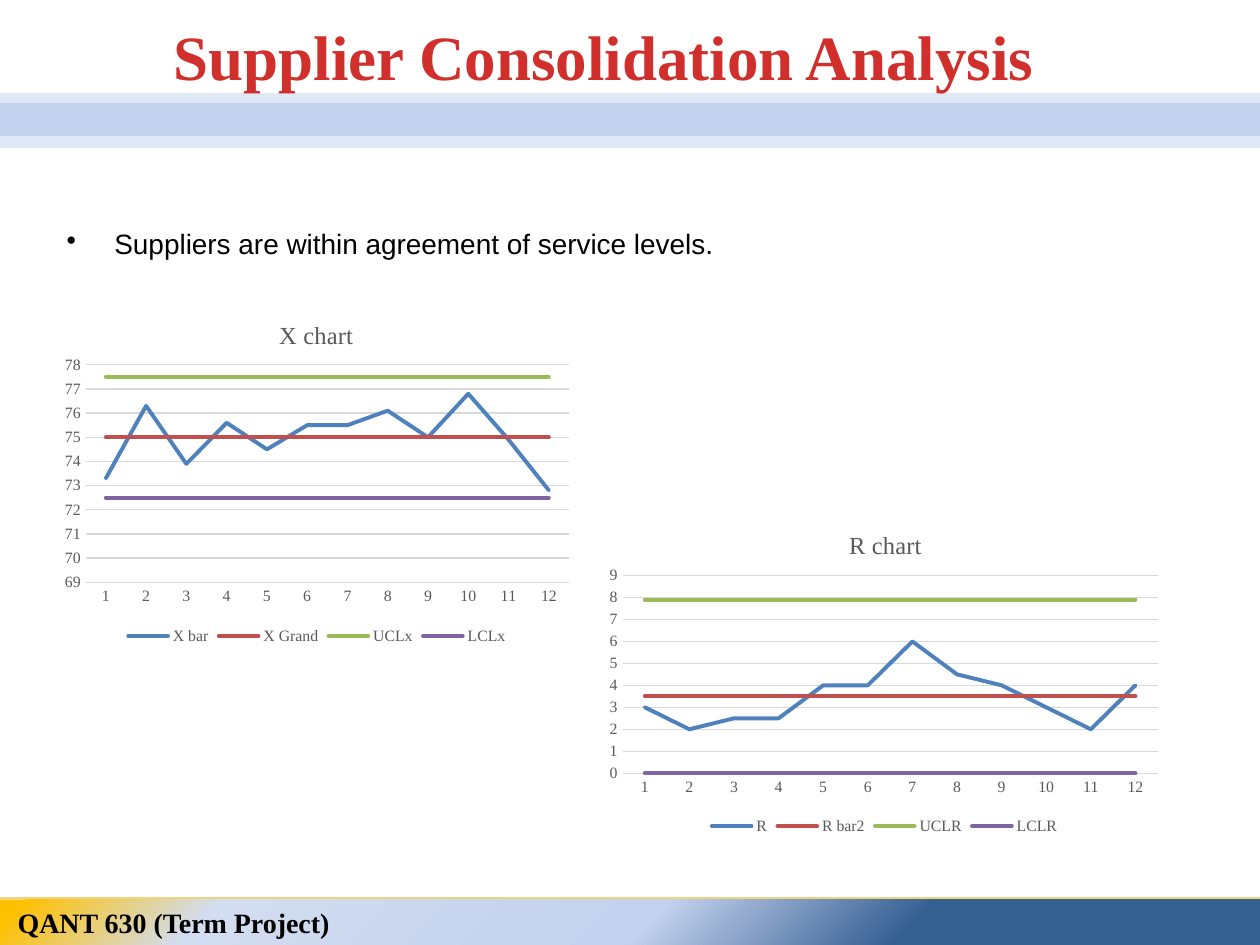
from dataclasses import dataclass

from lxml import etree
from pptx import Presentation
from pptx.chart.data import CategoryChartData
from pptx.dml.color import RGBColor
from pptx.enum.chart import XL_CHART_TYPE, XL_LEGEND_POSITION, XL_TICK_MARK
from pptx.enum.shapes import MSO_CONNECTOR, MSO_SHAPE
from pptx.enum.text import MSO_ANCHOR, PP_ALIGN
from pptx.oxml import parse_xml
from pptx.oxml.ns import nsdecls, qn
from pptx.util import Inches, Pt

LINE_CHART = XL_CHART_TYPE.LINE
LEGEND_BOTTOM = XL_LEGEND_POSITION.BOTTOM
NO_TICK = XL_TICK_MARK.NONE
STRAIGHT = MSO_CONNECTOR.STRAIGHT
RECTANGLE = MSO_SHAPE.RECTANGLE
TOP, MIDDLE = MSO_ANCHOR.TOP, MSO_ANCHOR.MIDDLE
LEFT, CENTER = PP_ALIGN.LEFT, PP_ALIGN.CENTER

SERIF, SANS = "Times New Roman", "Arial"
BLACK, RED, GRAY, GRID = "000000", "D02F2C", "595959", "D9D9D9"
BAND, BAND_EDGE, GOLD = "C2D1ED", "DFE8F5", "F0D47B"
SERIES_COLORS = ("4F81BD", "C0504D", "9BBB59", "8064A2")
FOOTER_STOPS = ((29, "376092"), (49, "C2D1ED"), (83, "D2DDF1"), (98, "FFC000"))
SAMPLES = range(1, 13)


@dataclass(frozen=True)
class Stripe:
    """A full-width horizontal line."""
    y: float
    color: str
    width: float


@dataclass(frozen=True)
class ControlChart:
    """A control chart with its measurements and constant limits."""
    title: str
    box: tuple[float, float, float, float]
    title_layout: dict[str, float]
    plot_layout: dict[str, float]
    axis_range: tuple[int, int]
    measure: str
    values: tuple[float, ...]
    limits: dict[str, float]


STRIPES = (
    Stripe(0.99, BAND, 20), Stripe(1.14, BAND_EDGE, 5.5), Stripe(0.84, BAND_EDGE, 5.5),
    Stripe(0.95, BAND, 20), Stripe(1.12, BAND_EDGE, 5.5), Stripe(0.78, BAND_EDGE, 5.5),
)

CONTROL_CHARTS = (
    ControlChart(
        "X chart", (0.43, 2.33, 4.17, 2.83), {"x": 0.42, "y": 0.06},
        {"x": 0.06, "y": 0.2, "w": 0.92, "h": 0.61}, (69, 78), "X bar",
        (73.3, 76.3, 73.9, 75.6, 74.5, 75.5, 75.5, 76.1, 75, 76.8, 74.9, 72.8),
        {"X Grand": 75, "UCLx": 77.5, "LCLx": 72.5},
    ),
    ControlChart(
        "R chart", (4.76, 4.01, 4.52, 2.66), {"x": 0.43, "y": 0.06},
        {"x": 0.04, "y": 0.21, "w": 0.94, "h": 0.59}, (0, 9), "R",
        (3, 2, 2.5, 2.5, 4, 4, 6, 4.5, 4, 3, 2, 4),
        {"R bar2": 3.5, "UCLR": 7.9, "LCLR": 0},
    ),
)


def rgb(color: str) -> RGBColor:
    """Turn a hex string into a colour."""
    return RGBColor.from_string(color)


def style_font(font, name: str, size: float, color: str, bold: bool = False) -> None:
    """Set the face, size, colour and weight of a font."""
    font.name, font.size, font.bold = name, Pt(size), bold
    font.color.rgb = rgb(color)


def style_line(line, color: str, width: float) -> None:
    """Set the colour and width of a line."""
    line.color.rgb = rgb(color)
    line.width = Pt(width)


def add_stripe(slide, stripe: Stripe) -> None:
    """Draw a horizontal line across the slide."""
    y = Inches(stripe.y)
    connector = slide.shapes.add_connector(STRAIGHT, 0, y, Inches(10), y)
    style_line(connector.line, stripe.color, stripe.width)
    etree.SubElement(connector._element.spPr, qn("a:effectLst"))


def set_text(shape, text: str, font: tuple, anchor=TOP, align=LEFT):
    """Write one formatted paragraph and return it."""
    frame = shape.text_frame
    frame.word_wrap = True
    frame.vertical_anchor = anchor
    frame.text = text
    paragraph = frame.paragraphs[0]
    paragraph.alignment = align
    style_font(paragraph.runs[0].font, *font)
    return paragraph


def add_text(slide, box: tuple, text: str, font: tuple, anchor=TOP, align=LEFT):
    """Add a text box and return its paragraph."""
    return set_text(slide.shapes.add_textbox(*map(Inches, box)), text, font, anchor, align)


def add_footer(slide) -> None:
    """Draw the gradient footer with the course name."""
    footer = slide.shapes.add_shape(RECTANGLE, *map(Inches, (-0.02, 7.14, 10.02, 0.48)))
    footer.shadow.inherit = False
    footer.line.fill.background()
    stops = "".join(
        f'<a:gs pos="{position * 1000}"><a:srgbClr val="{color}"/></a:gs>'
        for position, color in FOOTER_STOPS
    )
    gradient = parse_xml(
        f'<a:gradFill {nsdecls("a")} rotWithShape="1"><a:gsLst>{stops}</a:gsLst>'
        '<a:path path="circle"><a:fillToRect l="100000" t="100000"/></a:path></a:gradFill>'
    )
    footer._element.spPr.find(qn("a:prstGeom")).addnext(gradient)
    set_text(footer, "QANT 630 (Term Project)", (SERIF, 16, BLACK, True))
    frame = footer.text_frame
    frame.margin_left, frame.margin_bottom = Inches(0.16), Inches(0.16)


def add_bullet(paragraph) -> None:
    """Give a paragraph a hanging bullet."""
    properties = paragraph._p.get_or_add_pPr()
    properties.set("marL", str(Inches(0.38)))
    properties.set("indent", str(Inches(-0.38)))
    etree.SubElement(properties, qn("a:buChar"), char="•")


def set_layout(parent, index: int, layout: dict[str, float], inner: bool = False) -> None:
    """Place a chart part at fractions of the chart area."""
    current = parent.find(qn("c:layout"))
    if current is not None:
        parent.remove(current)
    target = '<c:layoutTarget val="inner"/>' if inner else ""
    modes = "".join(f'<c:{axis}Mode val="edge"/>' for axis in "xy")
    sizes = "".join(f'<c:{key} val="{value}"/>' for key, value in layout.items())
    parent.insert(index, parse_xml(
        f'<c:layout {nsdecls("c")}><c:manualLayout>{target}{modes}{sizes}'
        '</c:manualLayout></c:layout>'
    ))


def add_control_chart(slide, control: ControlChart) -> None:
    """Draw a control chart as a line chart."""
    data = CategoryChartData()
    data.categories = [str(sample) for sample in SAMPLES]
    data.add_series(control.measure, control.values)
    for name, limit in control.limits.items():
        data.add_series(name, [limit] * len(SAMPLES))
    chart = slide.shapes.add_chart(LINE_CHART, *map(Inches, control.box), data).chart
    style_font(chart.font, SERIF, 10, BLACK)

    title = chart.chart_title
    title.text_frame.text = control.title
    style_font(title.text_frame.paragraphs[0].runs[0].font, SERIF, 14, GRAY)
    set_layout(title._element, 1, control.title_layout)
    set_layout(chart._chartSpace.chart.plotArea, 0, control.plot_layout, inner=True)

    chart.has_legend = True
    chart.legend.position = LEGEND_BOTTOM
    chart.legend.include_in_layout = False
    style_font(chart.legend.font, SERIF, 9, GRAY)

    sample_axis, value_axis = chart.category_axis, chart.value_axis
    for axis in (sample_axis, value_axis):
        axis.major_tick_mark = axis.minor_tick_mark = NO_TICK
        style_font(axis.tick_labels.font, SERIF, 9, GRAY)
    style_line(sample_axis.format.line, GRID, 0.75)
    value_axis.format.line.fill.background()
    style_line(value_axis.major_gridlines.format.line, GRID, 0.75)
    value_axis.minimum_scale, value_axis.maximum_scale = control.axis_range
    value_axis.major_unit = 1
    value_axis.tick_labels.number_format = "0"
    value_axis.tick_labels.number_format_is_linked = False

    chart.plots[0].vary_by_categories = False
    for series, color in zip(chart.plots[0].series, SERIES_COLORS):
        series.smooth = False
        style_line(series.format.line, color, 2.25)
        series._element.find(f"{qn('c:spPr')}/{qn('a:ln')}").set("cap", "rnd")


def main() -> None:
    """Build the supplier analysis slide."""
    deck = Presentation()
    deck.slide_width, deck.slide_height = Inches(10), Inches(7.5)
    slide = deck.slides.add_slide(deck.slide_layouts[6])
    add_stripe(slide, Stripe(7.14, GOLD, 3))
    add_footer(slide)
    for stripe in STRIPES:
        add_stripe(slide, stripe)
    add_text(slide, (0.91, 0.09, 7.89, 0.69), "Supplier Consolidation Analysis ",
             (SERIF, 36, RED, True), MIDDLE, CENTER)
    finding = add_text(slide, (0.43, 1.75, 9, 4.95),
                       "Suppliers are within agreement of service levels.", (SANS, 16, BLACK))
    finding.space_before = Pt(3.2)
    add_bullet(finding)
    for control in CONTROL_CHARTS:
        add_control_chart(slide, control)
    deck.save("out.pptx")


if __name__ == "__main__":
    main()
